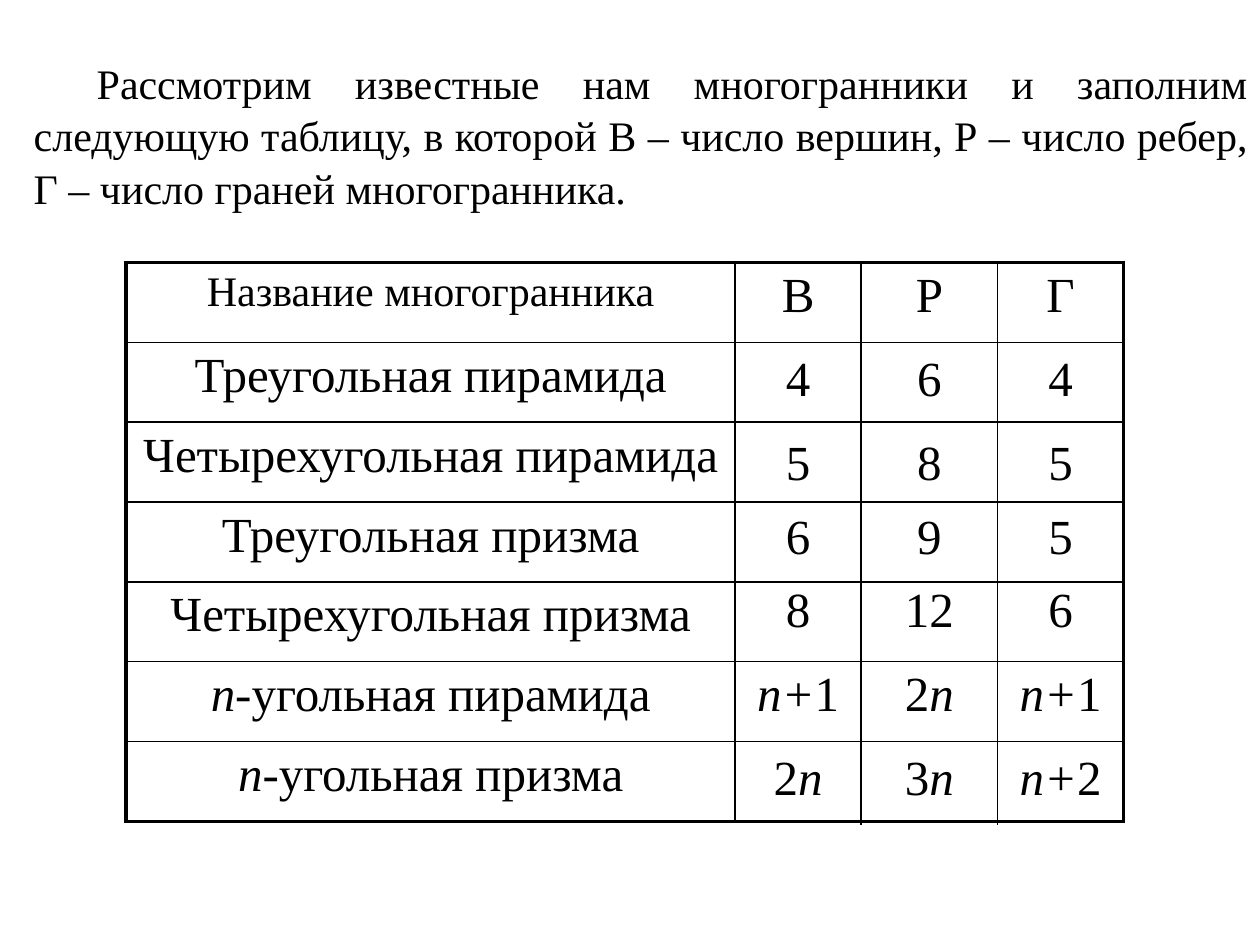
from lxml import etree
from pptx import Presentation
from pptx.dml.color import RGBColor
from pptx.enum.text import MSO_AUTO_SIZE, PP_ALIGN
from pptx.oxml.ns import qn
from pptx.util import Cm, Pt

CENTER, JUSTIFY = PP_ALIGN.CENTER, PP_ALIGN.JUSTIFY
BLACK = RGBColor(0, 0, 0)
FONT = "Times New Roman"
THIN, THICK = 1, 2.25

# Content: asterisks enclose italics
INTRO = ("\tРассмотрим известные нам многогранники и заполним следующую таблицу, "
         "в которой В *– *число вершин, Р* – *число ребер, "
         "Г – число граней многогранника.")
HEADER = ["Название многогранника", "В", "Р", "Г"]
# Name, top of its values in cm, values
SOLIDS = [
    ("Треугольная пирамида", 6.99, ["4", "6", "4"]),
    ("Четырехугольная пирамида", 8.68, ["5", "8", "5"]),
    ("Треугольная призма", 10.16, ["6", "9", "5"]),
    ("Четырехугольная призма", 11.64, ["8", "12", "6"]),
    ("*n-*угольная пирамида", 13.33, ["*n+*1", "2*n*", "*n+*1"]),
    ("*n-*угольная призма", 15.03, ["2*n*", "3*n*", "*n+*2"]),
]

# Layout in cm
TABLE_LEFT, TABLE_TOP = 2.54, 5.29
NAME_WIDTH = 12.28
VALUE_WIDTHS = [2.54, 2.75, 2.54]
ROW_HEIGHT = 1.61


def write(paragraph, marked_text, size, align):
    paragraph.alignment = align
    for i, part in enumerate(marked_text.split("*")):
        if part:
            run = paragraph.add_run()
            run.text = part
            run.font.name = FONT
            run.font.size = Pt(size)
            run.font.color.rgb = BLACK
            run.font.italic = i % 2 == 1


def set_borders(cell, widths):
    """Widths run left, right, top, bottom; 0 means no line."""
    properties = cell._tc.get_or_add_tcPr()
    for position, (side, width) in enumerate(zip("LRTB", widths)):
        line = etree.Element(qn(f"a:ln{side}"), w=str(int(Pt(width))))
        if width:
            fill = etree.SubElement(line, qn("a:solidFill"))
            etree.SubElement(fill, qn("a:srgbClr"), val=str(BLACK))
        else:
            etree.SubElement(line, qn("a:noFill"))
        properties.insert(position, line)


def add_grid(slide, left, top, widths, rows, outer, row_line):
    shape = slide.shapes.add_table(len(rows), len(widths), Cm(left), Cm(top),
                                   Cm(sum(widths)), Cm(ROW_HEIGHT * len(rows)))
    table = shape.table
    table.first_row = table.horz_banding = False
    for column, width in zip(table.columns, widths):
        column.width = Cm(width)
    last_row, last_column = len(rows) - 1, len(widths) - 1
    for r, row in enumerate(rows):
        table.rows[r].height = Cm(ROW_HEIGHT)
        for c, text in enumerate(row):
            cell = table.cell(r, c)
            cell.fill.background()
            set_borders(cell, [outer if c == 0 else THIN,
                               outer if c == last_column else THIN,
                               outer if r == 0 else row_line,
                               outer if r == last_row else row_line])
            size = 24 if text == HEADER[0] else 28
            write(cell.text_frame.paragraphs[0], text, size, CENTER)


presentation = Presentation()
presentation.slide_width, presentation.slide_height = Cm(25.4), Cm(19.05)
slide = presentation.slides.add_slide(presentation.slide_layouts[6])

# Introduction
intro = slide.shapes.add_textbox(Cm(0.43), Cm(0.99), Cm(24.97), Cm(3.33)).text_frame
intro.word_wrap = True
intro.auto_size = MSO_AUTO_SIZE.SHAPE_TO_FIT_TEXT
intro.paragraphs[0].line_spacing = 1.04
write(intro.paragraphs[0], INTRO, 24, JUSTIFY)

# Framed table with the names
name_rows = [[name, "", "", ""] for name, _, _ in SOLIDS]
add_grid(slide, TABLE_LEFT, TABLE_TOP, [NAME_WIDTH] + VALUE_WIDTHS,
         [HEADER] + name_rows, THICK, THIN)

# Values of each solid, laid over its row
for _, top, values in SOLIDS:
    add_grid(slide, TABLE_LEFT + NAME_WIDTH, top, VALUE_WIDTHS, [values], 0, 0)

presentation.save("out.pptx")
